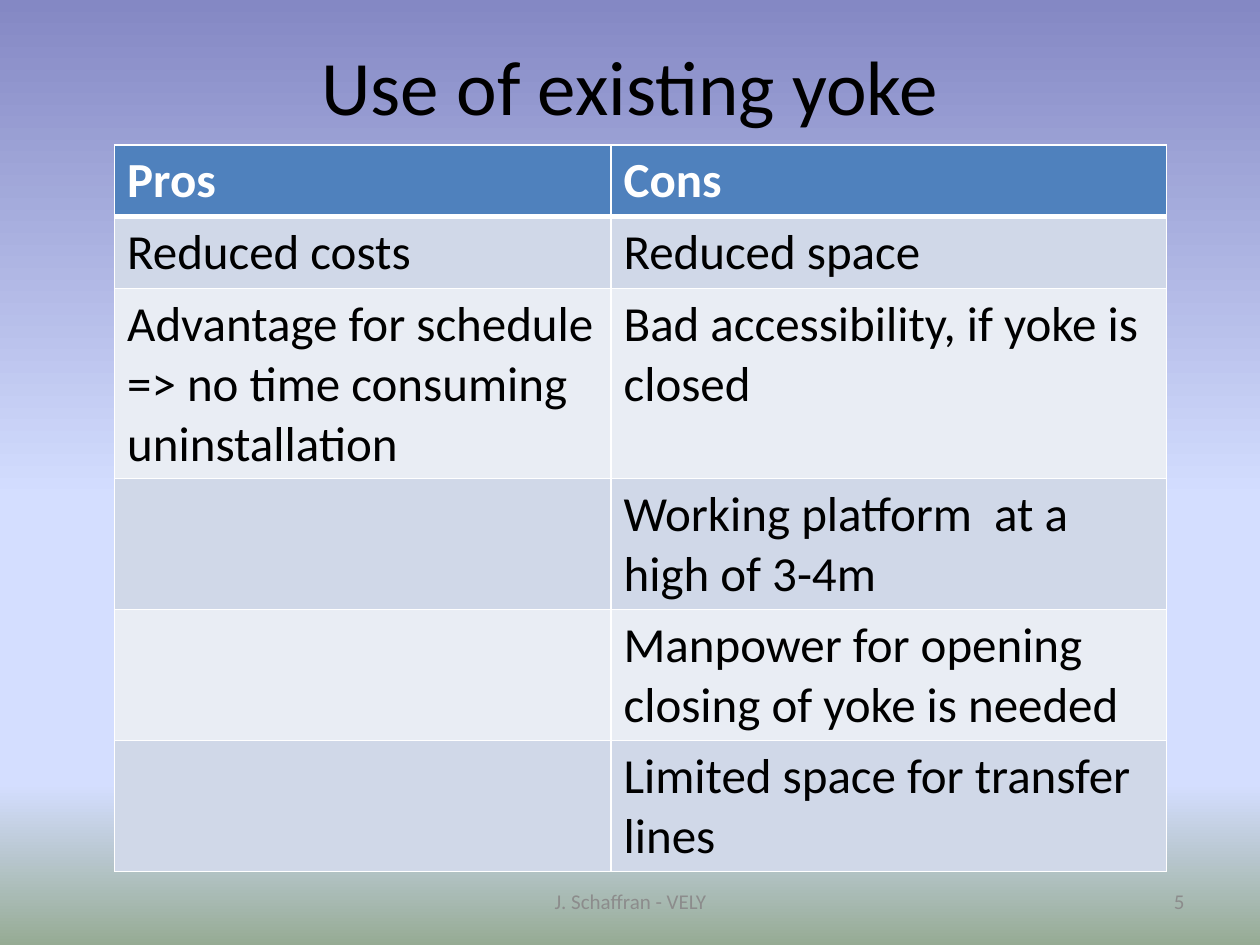
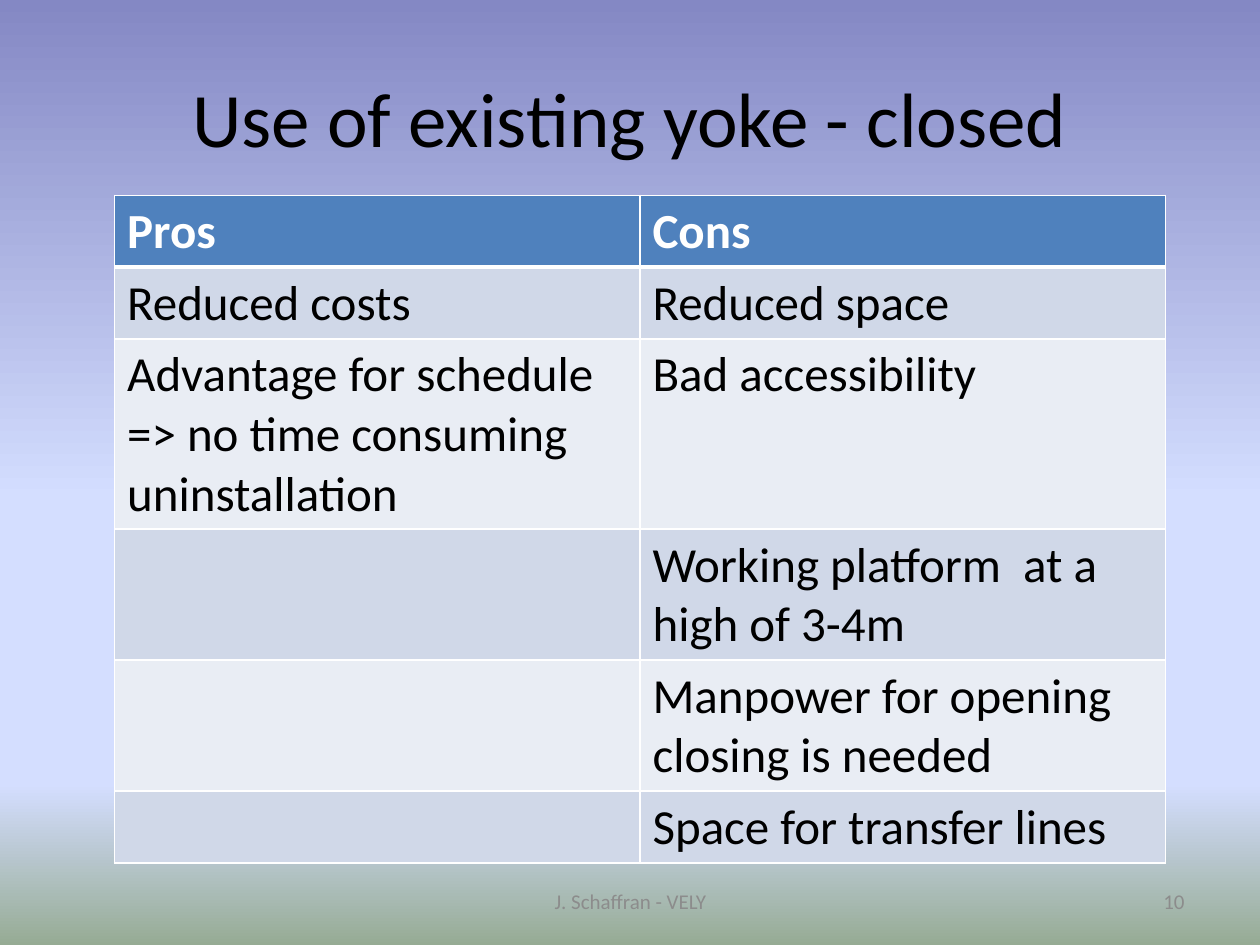
import pptx
import pptx.dml.color
import pptx.enum.text
import pptx.oxml
import pptx.oxml.ns
import pptx.util
from pptx.util import Inches

FONT = "Calibri"
BLACK, WHITE, GREY = "000000", "FFFFFF", "8C8C8C"
HEADER_FILL = "4F81BD"
BAND_FILLS = ["E9EDF4", "D0D8E8"]
SKY = [(0, "8488C4"), (53, "D4DEFF"), (83, "D4DEFF"), (100, "96AB94")]
FOOTER = "J. Schaffran - VELY"
TABLE_LEFT = 0.91
LINE_HEIGHT, CELL_PADDING = 0.47, 0.1
ALIGN = pptx.enum.text.PP_ALIGN


def rgb(value):
    return pptx.dml.color.RGBColor.from_string(value)


def format_text(tf, size, color, bold=False, align=ALIGN.LEFT):
    for p in tf.paragraphs:
        p.alignment = align
        for r in p.runs:
            r.font.name = FONT
            r.font.size = pptx.util.Pt(size)
            r.font.bold = bold
            r.font.color.rgb = rgb(color)


def add_sky(s):
    fill = s.background.fill
    fill.gradient()
    fill.gradient_angle = 270
    stops = s.element.find(".//" + pptx.oxml.ns.qn("a:gsLst"))
    for stop in list(stops):
        stops.remove(stop)
    for position, color in SKY:
        stops.append(pptx.oxml.parse_xml(
            f'<a:gs {pptx.oxml.ns.nsdecls("a")} pos="{position * 1000}">'
            f'<a:srgbClr val="{color}"/></a:gs>'))


def add_text(s, box, text, size, color, align):
    tf = s.shapes.add_textbox(*map(Inches, box)).text_frame
    tf.word_wrap = True
    tf.vertical_anchor = pptx.enum.text.MSO_ANCHOR.MIDDLE
    tf.text = text
    format_text(tf, size, color, align=align)


def set_borders(cell, row):
    widths = {"L": 1, "R": 1, "T": 3 if row == 1 else 1, "B": 3 if row == 0 else 1}
    for side, width in widths.items():
        cell._tc.get_or_add_tcPr().append(pptx.oxml.parse_xml(
            f'<a:ln{side} {pptx.oxml.ns.nsdecls("a")} w="{width * 12700}">'
            f'<a:solidFill><a:srgbClr val="{WHITE}"/></a:solidFill></a:ln{side}>'))


def add_pros_cons(s, top, widths, rows):
    rows = [("Pros", "Cons", 1)] + rows
    heights = [CELL_PADDING + LINE_HEIGHT * lines for _, _, lines in rows]
    table = s.shapes.add_table(
        len(rows), len(widths), Inches(TABLE_LEFT), Inches(top),
        Inches(sum(widths)), Inches(sum(heights))).table
    for column, width in zip(table.columns, widths):
        column.width = Inches(width)
    for i, (pro, con, _) in enumerate(rows):
        table.rows[i].height = Inches(heights[i])
        header = i == 0
        for j, text in enumerate((pro, con)):
            cell = table.cell(i, j)
            set_borders(cell, i)
            cell.fill.solid()
            cell.fill.fore_color.rgb = rgb(HEADER_FILL if header else BAND_FILLS[i % 2])
            if text:
                cell.text_frame.text = text
                format_text(cell.text_frame, 28, WHITE if header else BLACK, header)


def add_slide(prs, number, title, title_top, table_top, widths, rows):
    s = prs.slides.add_slide(prs.slide_layouts[6])
    add_sky(s)
    add_text(s, (0.5, title_top, 9, 1.25), title, 44, BLACK, ALIGN.CENTER)
    add_pros_cons(s, table_top, widths, rows)
    add_text(s, (3.42, 6.95, 3.17, 0.4), FOOTER, 12, GREY, ALIGN.CENTER)
    add_text(s, (7.17, 6.95, 2.33, 0.4), str(number), 12, GREY, ALIGN.RIGHT)


def yoke_rows(accessibility, manpower, transfer, transfer_lines):
    return [
        ("Reduced costs", "Reduced space", 1),
        ("Advantage for schedule => no time consuming uninstallation", accessibility, 3),
        ("", "Working platform  at a high of 3-4m", 2),
        ("", manpower, 2),
        ("", transfer, transfer_lines),
    ]


def main():
    prs = pptx.Presentation()
    prs.slide_width, prs.slide_height = Inches(10), Inches(7.5)
    add_slide(prs, 5, "Use of existing yoke", 0.05, 1.15, (3.94, 4.41),
              yoke_rows("Bad accessibility, if yoke is closed",
                        "Manpower for opening closing of yoke is needed",
                        "Limited space for transfer lines", 2))
    add_slide(prs, 10, "Use of existing yoke - closed", 0.3, 1.55, (4.17, 4.17),
              yoke_rows("Bad accessibility",
                        "Manpower for opening closing is needed",
                        "Space for transfer lines", 1))
    prs.save("out.pptx")


if __name__ == "__main__":
    main()
